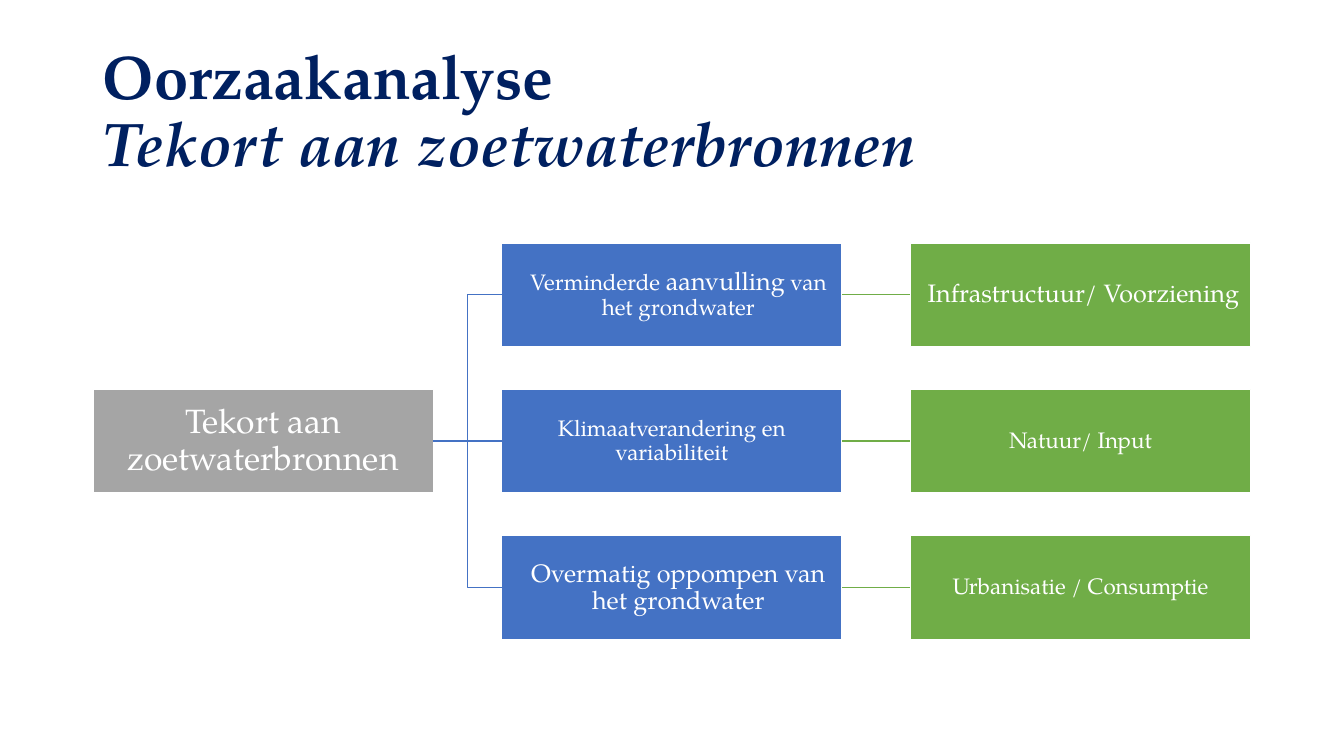
from dataclasses import dataclass

import pptx
import pptx.dml.color
import pptx.enum.shapes
import pptx.enum.text
import pptx.oxml
import pptx.oxml.ns
import pptx.util
from pptx.util import Cm

FONT = "TeX Gyre Pagella"
NAVY, WHITE = "002060", "FFFFFF"
GREY, BLUE, GREEN = "A5A5A5", "4472C4", "70AD47"

LEFT, TOP = 2.34, 6.12
BOX_WIDTH, BOX_HEIGHT = 8.58, 2.61
COLUMN_STEP, ROW_STEP = 10.3, 3.69
LEFT_SITE, RIGHT_SITE = 1, 3


@dataclass
class Span:
    text: str
    size: int


@dataclass
class Node:
    spans: list[Span]
    indent: float = 0


@dataclass
class Branch:
    cause: Node
    category: Node


PROBLEM = Node([Span("Tekort aan zoetwaterbronnen", 24)])
BRANCHES = [
    Branch(
        Node([Span("Verminderde ", 16), Span("aanvulling", 18),
              Span(" van het grondwater", 16)], indent=0.33),
        Node([Span("Infrastructuur/ Voorziening", 18)], indent=0.15),
    ),
    Branch(
        Node([Span("Klimaatverandering en variabiliteit", 16)]),
        Node([Span("Natuur/ Input", 16)]),
    ),
    Branch(
        Node([Span("Overmatig oppompen van het grondwater", 18)], indent=0.33),
        Node([Span("Urbanisatie / Consumptie", 16)]),
    ),
]


def color(value: str) -> pptx.dml.color.RGBColor:
    return pptx.dml.color.RGBColor.from_string(value)


def format_run(run, size: int, shade: str) -> None:
    run.font.name = FONT
    run.font.size = pptx.util.Pt(size)
    run.font.color.rgb = color(shade)


def add_title(page) -> None:
    box = page.shapes.add_textbox(Cm(LEFT), Cm(1.01), Cm(29.21), Cm(3.68))
    frame = box.text_frame
    frame.word_wrap = True
    frame.vertical_anchor = pptx.enum.text.MSO_ANCHOR.MIDDLE
    frame.text = "Oorzaakanalyse\vTekort aan zoetwaterbronnen"
    para = frame.paragraphs[0]
    para.line_spacing = 0.9
    para.font.size = pptx.util.Pt(44)
    for run in para.runs:
        format_run(run, 44, NAVY)
        run.font.bold = True
    para.runs[-1].font.italic = True


def add_node(page, node: Node, column: int, row: int, fill: str):
    box = page.shapes.add_shape(
        pptx.enum.shapes.MSO_SHAPE.RECTANGLE,
        Cm(LEFT + column * COLUMN_STEP), Cm(TOP + row * ROW_STEP),
        Cm(BOX_WIDTH), Cm(BOX_HEIGHT),
    )
    box.shadow.inherit = False
    box.fill.solid()
    box.fill.fore_color.rgb = color(fill)
    box.line.color.rgb = color(WHITE)
    box.line.width = pptx.util.Pt(1)

    frame = box.text_frame
    frame.word_wrap = True
    frame.vertical_anchor = pptx.enum.text.MSO_ANCHOR.MIDDLE
    frame.margin_left = frame.margin_right = Cm(0.03)
    frame.margin_top = frame.margin_bottom = Cm(0.03)
    para = frame.paragraphs[0]
    para.alignment = pptx.enum.text.PP_ALIGN.CENTER
    para.line_spacing = 0.9
    if node.indent:
        para._p.get_or_add_pPr().set("marL", str(Cm(node.indent)))
    for span in node.spans:
        run = para.add_run()
        run.text = span.text
        format_run(run, span.size, WHITE)
    return box


def link(page, source, target, shade: str) -> None:
    """Join the right side of source to the left side of target."""
    kinds = pptx.enum.shapes.MSO_CONNECTOR
    kind = kinds.STRAIGHT if source.top == target.top else kinds.ELBOW
    connector = page.shapes.add_connector(kind, 0, 0, 0, 0)
    connector.begin_connect(source, RIGHT_SITE)
    connector.end_connect(target, LEFT_SITE)
    connector.line.color.rgb = color(shade)
    connector.line.width = pptx.util.Pt(1)
    properties = connector._element.spPr
    properties.append(pptx.oxml.parse_xml(
        f"<a:effectLst {pptx.oxml.ns.nsdecls('a')}/>"))


def main() -> None:
    deck = pptx.Presentation()
    deck.slide_width, deck.slide_height = Cm(33.87), Cm(19.05)
    page = deck.slides.add_slide(deck.slide_layouts[6])
    add_title(page)
    problem = add_node(page, PROBLEM, 0, 1, GREY)
    for row, branch in enumerate(BRANCHES):
        cause = add_node(page, branch.cause, 1, row, BLUE)
        category = add_node(page, branch.category, 2, row, GREEN)
        link(page, problem, cause, BLUE)
        link(page, cause, category, GREEN)
    deck.save("out.pptx")


if __name__ == "__main__":
    main()
